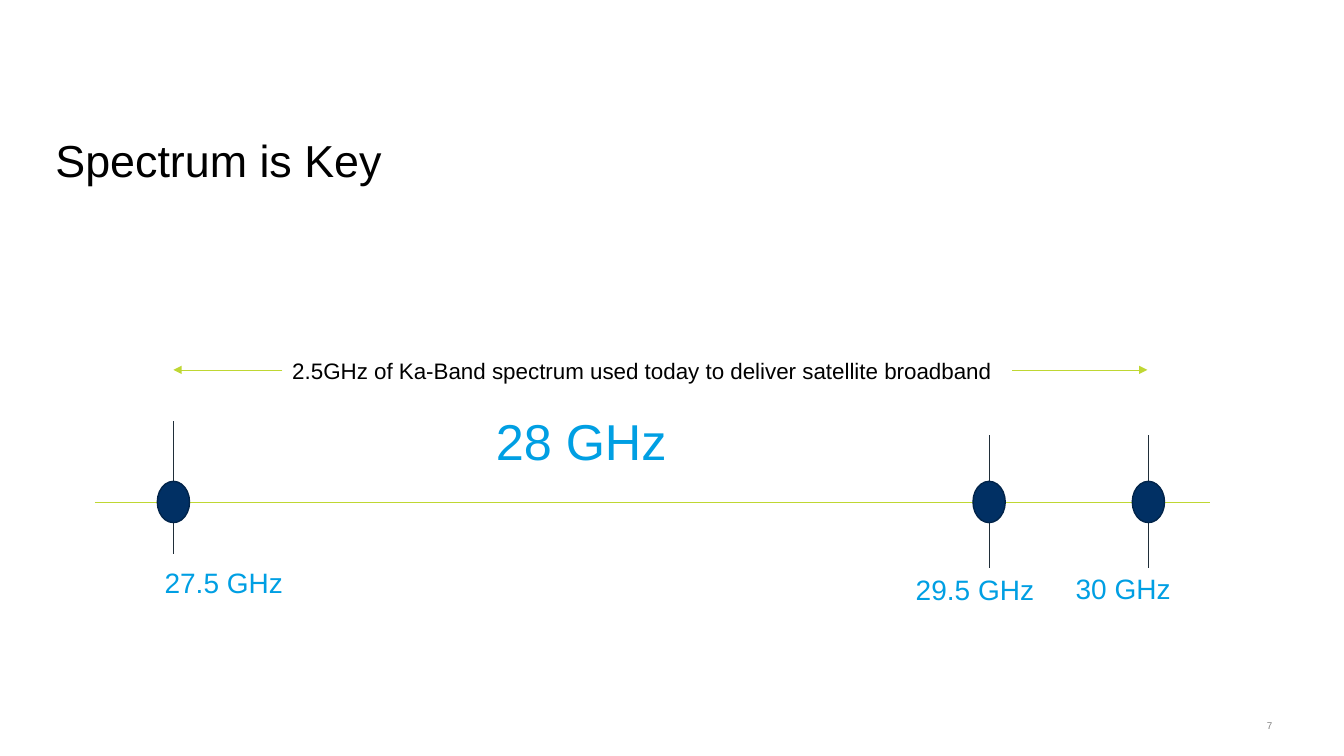
from lxml import etree
from pptx import Presentation
from pptx.dml.color import RGBColor
from pptx.enum import shapes as kinds, text as modes
from pptx.oxml import ns
from pptx.util import Inches, Pt

BLACK = RGBColor(0x00, 0x00, 0x00)
GRAY = RGBColor(0x80, 0x80, 0x80)
SLATE = RGBColor(0x20, 0x2E, 0x39)
LIME = RGBColor(0xBF, 0xD7, 0x33)
SKY = RGBColor(0x00, 0x9F, 0xE3)
NAVY = RGBColor(0x01, 0x30, 0x64)
EDGE = RGBColor(0x01, 0x24, 0x4A)

TITLE = "Spectrum is Key"
SPAN = "2.5GHz of Ka-Band spectrum used today to deliver satellite broadband"
BAND = "28 GHz"
PAGE = "7"
MARKS = [
    ("27.5 GHz", 1.72, 4.18, 2.22, 5.67),
    ("29.5 GHz", 9.81, 4.32, 9.67, 5.74),
    ("30 GHz", 11.39, 4.32, 11.14, 5.73),
]
ARROWS = [(2.8, 1.72), (10.04, 11.38)]
AXIS = (0.94, 12, 4.98)
SPAN_Y = 3.67
TICK = 1.32
DOT_W, DOT_H = 0.32, 0.41
LABEL_W, LABEL_H = 2.55, 0.83

deck = Presentation()
deck.slide_width, deck.slide_height = Inches(13.33), Inches(7.5)
slide = deck.slides.add_slide(deck.slide_layouts[5])


def write(words, box, size, color, align="LEFT", anchor="TOP", lead=None, pad=(0, 0), shape=None):
    spot = [Inches(n) for n in box]
    if shape is None:
        shape = slide.shapes.add_textbox(*spot)
    else:
        shape.left, shape.top, shape.width, shape.height = spot
    frame = shape.text_frame
    frame.word_wrap = True
    frame.auto_size = modes.MSO_AUTO_SIZE.NONE
    frame.vertical_anchor = modes.MSO_ANCHOR[anchor]
    frame.margin_left = frame.margin_right = Inches(pad[0])
    frame.margin_top = frame.margin_bottom = Inches(pad[1])
    para = frame.paragraphs[0]
    para.text = words
    para.alignment = modes.PP_ALIGN[align]
    if lead:
        para.line_spacing = lead
    font = para.runs[0].font
    font.name, font.size = "Arial", Pt(size)
    font.color.rgb = color


def rule(x1, y1, x2, y2, color, arrow=False):
    line = slide.shapes.add_connector(
        kinds.MSO_CONNECTOR.STRAIGHT, Inches(x1), Inches(y1), Inches(x2), Inches(y2))
    line.line.color.rgb = color
    line.line.width = Pt(0.5)
    if arrow:
        etree.SubElement(line.line._get_or_add_ln(), ns.qn("a:tailEnd"), type="triangle")
    etree.SubElement(line._element.spPr, ns.qn("a:effectLst"))


def dot(x, y):
    oval = slide.shapes.add_shape(
        kinds.MSO_SHAPE.OVAL, Inches(x - DOT_W / 2), Inches(y - DOT_H / 2),
        Inches(DOT_W), Inches(DOT_H))
    oval.shadow.inherit = False
    oval.fill.solid()
    oval.fill.fore_color.rgb = NAVY
    oval.line.color.rgb = EDGE
    oval.line.width = Pt(1)


write(TITLE, (0.55, 1.18, 12.25, 0.88), 32, BLACK, anchor="MIDDLE", lead=0.9,
      shape=slide.shapes.title)
write(PAGE, (12.47, 7.09, 0.15, 0.22), 7, GRAY, align="RIGHT", anchor="MIDDLE")
write(SPAN, (2.8, 3.49, 8.18, 0.59), 16, BLACK, pad=(0.1, 0.05))
write(BAND, (4.28, 4.18, 2.97, 1.32), 36, SKY, align="CENTER", lead=0.8)

for start, end in ARROWS:
    rule(start, SPAN_Y, end, SPAN_Y, LIME, arrow=True)

left, right, mid = AXIS
rule(left, mid, right, mid, LIME)
for label, x, top, center, y in MARKS:
    rule(x, top, x, top + TICK, SLATE)
    dot(x, mid)
    write(label, (center - LABEL_W / 2, y, LABEL_W, LABEL_H), 20, SKY,
          align="CENTER", lead=0.8)

deck.save("out.pptx")
